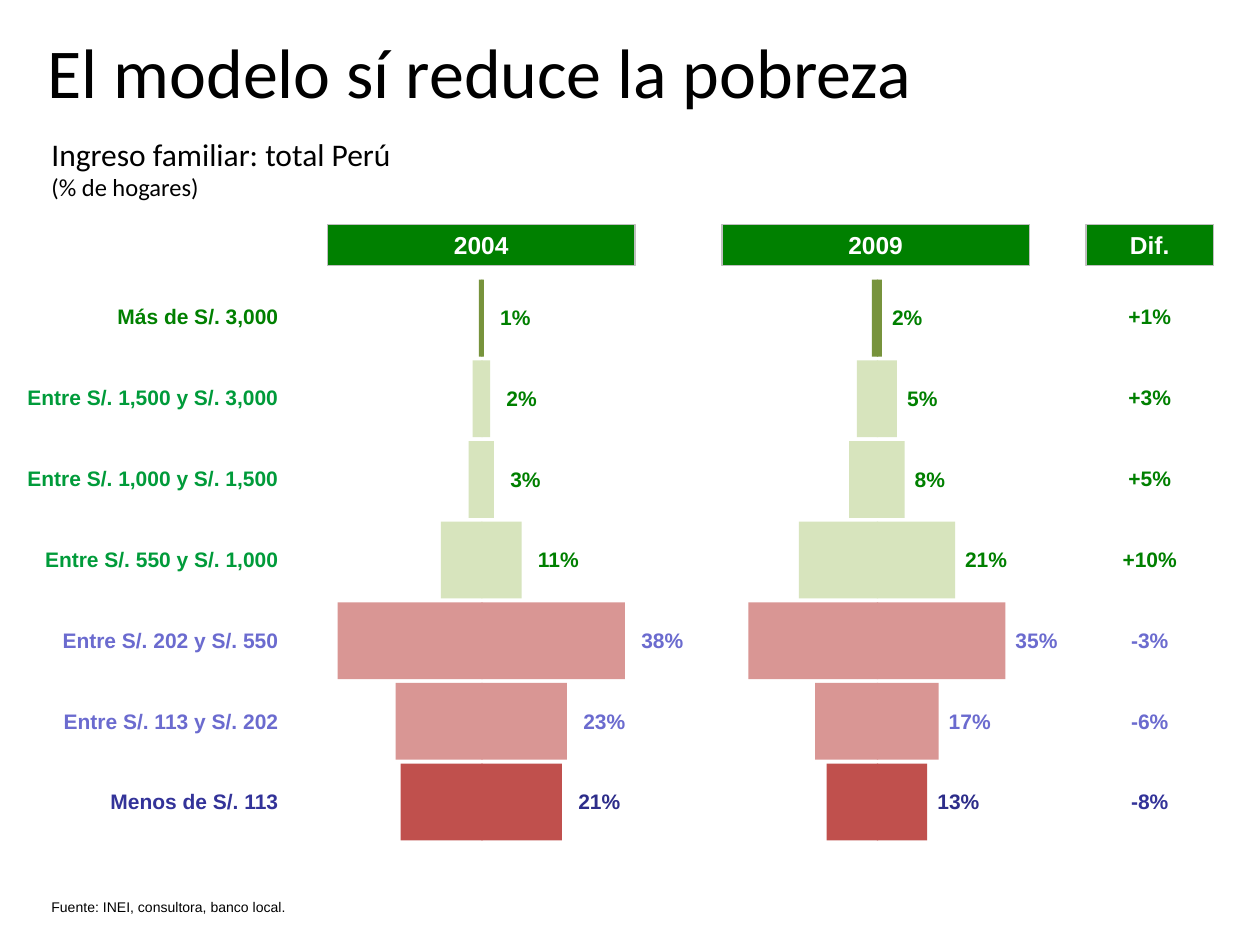
from dataclasses import dataclass

from pptx import Presentation
from pptx.dml.color import RGBColor
from pptx.enum.shapes import MSO_SHAPE
from pptx.enum.text import MSO_ANCHOR, MSO_AUTO_SIZE, PP_ALIGN
from pptx.util import Inches, Pt

RECT = MSO_SHAPE.RECTANGLE
GROW = MSO_AUTO_SIZE.SHAPE_TO_FIT_TEXT
TOP, MIDDLE = MSO_ANCHOR.TOP, MSO_ANCHOR.MIDDLE
LEFT, CENTER, RIGHT = PP_ALIGN.LEFT, PP_ALIGN.CENTER, PP_ALIGN.RIGHT

BLACK = RGBColor(0x00, 0x00, 0x00)
WHITE = RGBColor(0xFF, 0xFF, 0xFF)
GREY = RGBColor(0xBF, 0xBF, 0xBF)
GREEN = RGBColor(0x00, 0x80, 0x00)
LEAF = RGBColor(0x00, 0x9B, 0x3A)
VIOLET = RGBColor(0x6B, 0x6B, 0xCF)
INDIGO = RGBColor(0x33, 0x33, 0x99)
NAVY = RGBColor(0x2D, 0x2D, 0x8A)
OLIVE = RGBColor(0x77, 0x93, 0x3C)
LIME = RGBColor(0xD7, 0xE4, 0xBD)
PINK = RGBColor(0xD9, 0x96, 0x94)
RED = RGBColor(0xC0, 0x50, 0x4D)

ROW_TOP, ROW_STEP = 2.2, 0.64
TABLE_H = 4.49
BAR_TOP, BAR_H = 2.22, 0.61
LAP = 0.01  # left halves reach past the axis, so no seam shows


@dataclass
class Band:
    name: str
    diff: str
    fill: RGBColor
    name_ink: RGBColor
    diff_ink: RGBColor
    share_ink: RGBColor


@dataclass
class Year:
    name: str
    left: float
    axis: float
    gap: float
    shares: list[int]
    halves: list[float]


BANDS = [
    Band("Más de S/. 3,000", "+1%", OLIVE, GREEN, GREEN, GREEN),
    Band("Entre S/. 1,500 y S/. 3,000", "+3%", LIME, LEAF, GREEN, GREEN),
    Band("Entre S/. 1,000 y S/. 1,500", "+5%", LIME, LEAF, GREEN, GREEN),
    Band("Entre S/. 550 y S/. 1,000", "+10%", LIME, LEAF, GREEN, GREEN),
    Band("Entre S/. 202 y S/. 550", "-3%", PINK, VIOLET, VIOLET, VIOLET),
    Band("Entre S/. 113 y S/. 202", "-6%", PINK, VIOLET, VIOLET, VIOLET),
    Band("Menos de S/. 113", "-8%", RED, INDIGO, INDIGO, NAVY),
]
YEARS = [
    Year("2004", 2.6, 3.82, 0.13, [1, 2, 3, 11, 38, 23, 21],
         [0.02, 0.07, 0.1, 0.32, 1.14, 0.68, 0.64]),
    Year("2009", 5.73, 6.96, 0.08, [2, 5, 8, 21, 35, 17, 13],
         [0.04, 0.16, 0.22, 0.62, 1.02, 0.49, 0.4]),
]


def write(para, text: str, size: float, ink: RGBColor, font: str = "Arial",
          bold: bool = False, align=LEFT) -> None:
    para.alignment = align
    run = para.add_run()
    run.text = text
    run.font.name = font
    run.font.size = Pt(size)
    run.font.bold = bold
    run.font.color.rgb = ink


def add_box(slide, left: float, top: float, width: float, height: float,
            anchor=TOP, wrap: bool = True):
    box = slide.shapes.add_textbox(Inches(left), Inches(top),
                                   Inches(width), Inches(height))
    frame = box.text_frame
    frame.word_wrap = wrap
    frame.vertical_anchor = anchor
    return frame


def add_rect(slide, left: float, top: float, width: float, height: float,
             fill: RGBColor):
    rect = slide.shapes.add_shape(RECT, Inches(left), Inches(top),
                                  Inches(width), Inches(height))
    rect.shadow.inherit = False
    rect.fill.solid()
    rect.fill.fore_color.rgb = fill
    rect.line.fill.background()
    return rect


def add_head(slide, text: str, left: float, width: float) -> None:
    head = add_rect(slide, left, 1.78, width, 0.33, GREEN)
    head.line.color.rgb = GREY
    head.line.width = Pt(0)
    head.text_frame.vertical_anchor = MIDDLE
    write(head.text_frame.paragraphs[0], text, 14, WHITE, bold=True, align=CENTER)


def add_year(slide, year: Year) -> None:
    """Draw bars mirrored about the axis, with the share at their right."""
    add_head(slide, year.name, year.left, 2.44)
    for i, (band, share, half) in enumerate(zip(BANDS, year.shares, year.halves)):
        top = BAR_TOP + i * ROW_STEP
        add_rect(slide, year.axis - half, top, half + LAP, BAR_H, band.fill)
        add_rect(slide, year.axis, top, half, BAR_H, band.fill)
        width = 0.36 if share > 9 else 0.27
        frame = add_box(slide, year.axis + half + year.gap, top + 0.2,
                        width, 0.2)
        frame.word_wrap = False
        frame.auto_size = GROW
        frame.margin_left = frame.margin_right = 0
        frame.margin_top = frame.margin_bottom = 0
        write(frame.paragraphs[0], f"{share}%", 12, band.share_ink, bold=True)


def add_list(slide, left: float, width: float, align,
             items: list[tuple[str, RGBColor]]) -> None:
    """Add a table of one plain column."""
    table = slide.shapes.add_table(len(items), 1, Inches(left), Inches(ROW_TOP),
                                   Inches(width), Inches(TABLE_H)).table
    table.first_row = table.horz_banding = False
    for i, (text, ink) in enumerate(items):
        cell = table.cell(i, 0)
        cell.fill.background()
        cell.vertical_anchor = MIDDLE
        cell.margin_left = cell.margin_right = 0
        cell.margin_top = cell.margin_bottom = 0
        write(cell.text_frame.paragraphs[0], text, 12, ink, bold=True, align=align)


def main() -> None:
    deck = Presentation()
    deck.slide_width, deck.slide_height = Inches(10), Inches(7.5)
    slide = deck.slides.add_slide(deck.slide_layouts[6])

    title = add_box(slide, 0.28, 0.18, 9.29, 0.78)
    write(title.paragraphs[0], "El modelo sí reduce la pobreza", 40, BLACK, "Calibri")
    lead = add_box(slide, 0.31, 0.93, 9.67, 0.81, MIDDLE)
    write(lead.paragraphs[0], "Ingreso familiar: total Perú", 18, BLACK, "Calibri")
    write(lead.add_paragraph(), "(% de hogares)", 14, BLACK, "Calibri")

    for year in YEARS:
        add_year(slide, year)
    add_head(slide, "Dif.", 8.62, 1.01)
    add_list(slide, 0.2, 2.01, RIGHT, [(b.name, b.name_ink) for b in BANDS])
    add_list(slide, 8.67, 0.91, CENTER, [(b.diff, b.diff_ink) for b in BANDS])

    source = add_box(slide, 0.31, 7.08, 4.57, 0.24)
    write(source.paragraphs[0], "Fuente: INEI, consultora, banco local.", 8, BLACK)
    deck.save("out.pptx")


if __name__ == "__main__":
    main()
